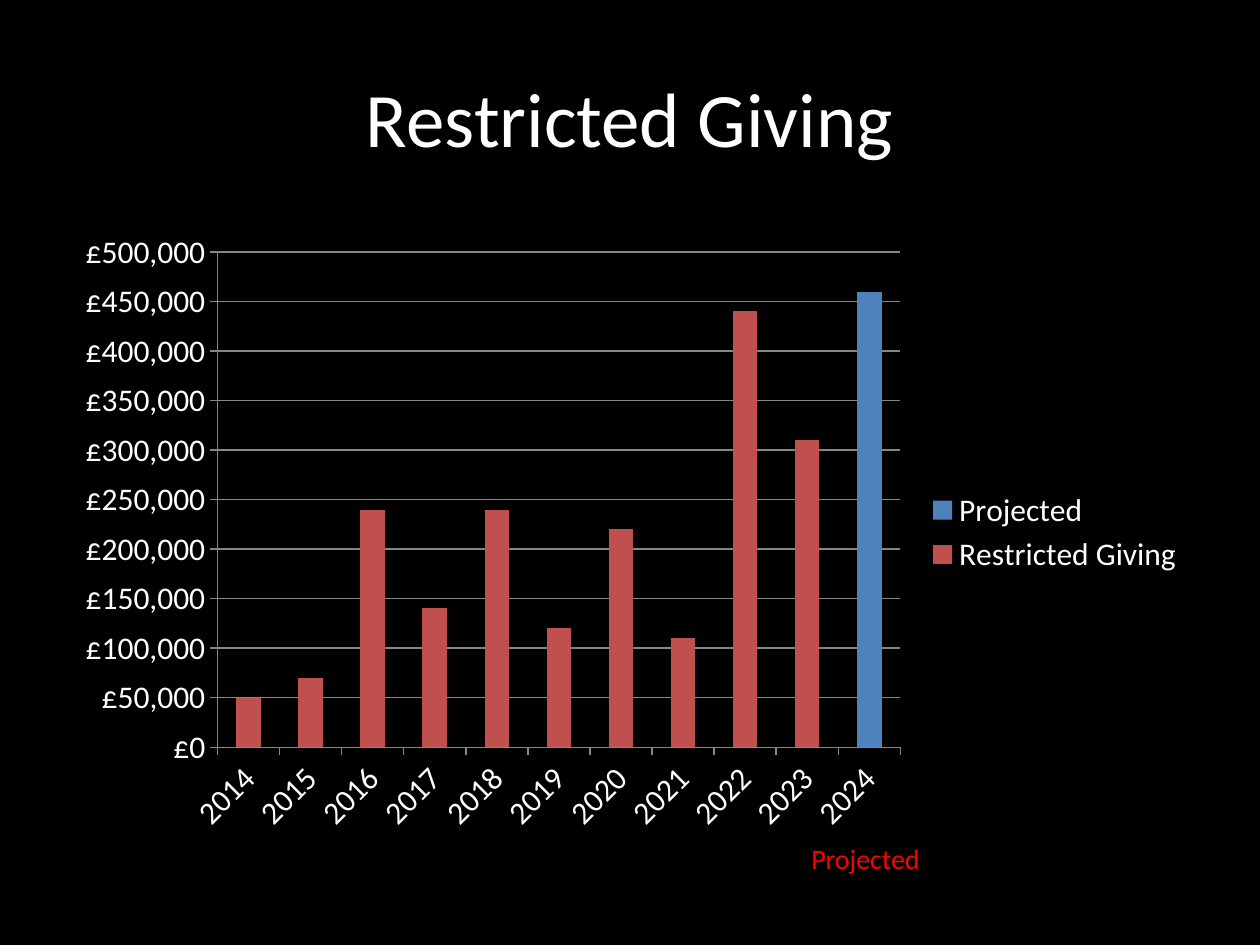
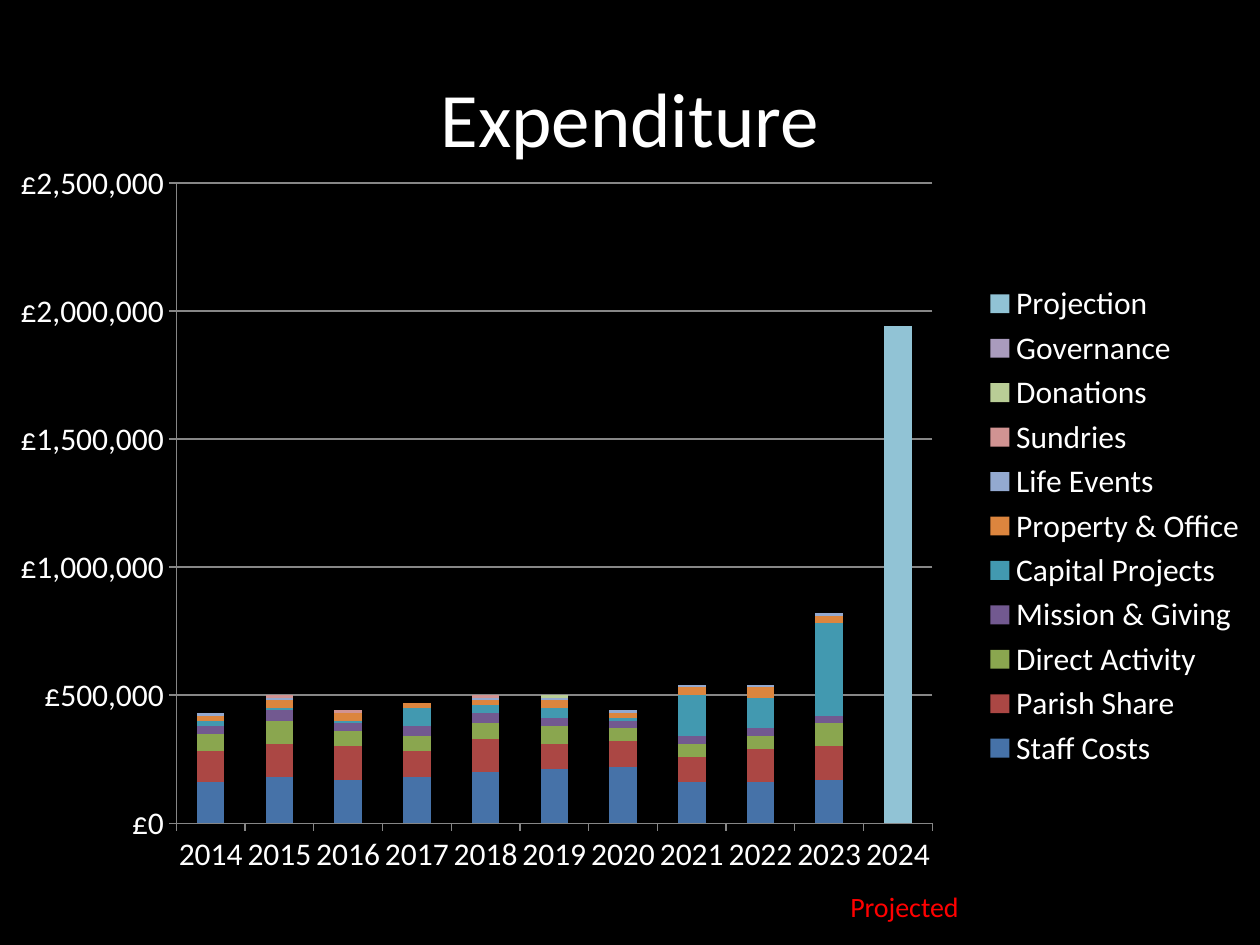
from dataclasses import dataclass

from lxml import etree
from pptx import Presentation
from pptx import util as u
from pptx.chart.data import CategoryChartData
from pptx.dml.color import RGBColor
from pptx.enum import chart as chart_enum
from pptx.enum import text
from pptx.oxml.ns import qn


@dataclass(frozen=True)
class Theme:
    font: str = "Calibri"
    background: str = "000000"
    foreground: str = "FFFFFF"
    accent: str = "FF0000"
    axis: str = "868686"
    title_size: int = 44
    chart_size: int = 18
    note_size: int = 16


THEME = Theme()
YEARS = [str(year) for year in range(2014, 2025)]
TITLE_BOX = (0.5, 0.3, 9, 1.25)

# Series: name, colour, values in thousands of pounds by year; missing years are empty.
ONLY_2024 = [None] * 10
GIVING = [
    ("Restricted Giving", "C0504D", [50, 70, 240, 140, 240, 120, 220, 110, 440, 310]),
    ("Projected", "4F81BD", ONLY_2024 + [460]),
]
EXPENDITURE = [
    ("Staff Costs", "4672A8", [160, 180, 170, 180, 200, 210, 220, 160, 160, 170]),
    ("Parish Share", "AB4744", [120, 130, 130, 100, 130, 100, 100, 100, 130, 130]),
    ("Direct Activity", "8AA64F", [70, 90, 60, 60, 60, 70, 50, 50, 50, 90]),
    ("Mission & Giving", "725990", [30, 40, 30, 40, 40, 30, 30, 30, 30, 30]),
    ("Capital Projects", "4299B0", [20, 10, 10, 70, 30, 40, 10, 160, 120, 360]),
    ("Property & Office", "DC853E", [20, 30, 30, 20, 20, 30, 20, 30, 40, 30]),
    ("Life Events", "93A9D0", [10, 10, 0, None, 10, 10, 10, 10, 10, 10]),
    ("Sundries", "D19392", [0, 10, 10, 0, 10, 0, 0, 0, 0, 0]),
    ("Donations", "B9CD96", [None] * 4 + [0, 10, 0, 0, 0, 0]),
    ("Governance", "A99BBD", [None] * 4 + [0] * 6),
    ("Projection", "91C3D5", ONLY_2024 + [1940]),
]


def inches(box):
    return [u.Inches(length) for length in box]


def set_attributes(target, **values):
    for name, value in values.items():
        setattr(target, name, value)


def style_font(font, size, color):
    set_attributes(font, name=THEME.font, size=u.Pt(size))
    font.color.rgb = RGBColor.from_string(color)


def style_line(line_format):
    line_format.color.rgb = RGBColor.from_string(THEME.axis)
    line_format.width = u.Pt(0.75)


def add_text(slide, box, words, size, color, **frame_format):
    shape = slide.shapes.add_textbox(*inches(box))
    set_attributes(shape.text_frame, **frame_format)
    paragraph = shape.text_frame.paragraphs[0]
    run = paragraph.add_run()
    run.text = words
    style_font(run.font, size, color)
    return paragraph


def add_title(slide, words):
    paragraph = add_text(slide, TITLE_BOX, words, THEME.title_size, THEME.foreground,
                         word_wrap=True, vertical_anchor=text.MSO_ANCHOR.MIDDLE)
    paragraph.alignment = text.PP_ALIGN.CENTER


def add_projected_note(slide, left, top):
    add_text(slide, (left, top, 1.08, 0.37), "Projected", THEME.note_size, THEME.accent,
             word_wrap=False, auto_size=text.MSO_AUTO_SIZE.SHAPE_TO_FIT_TEXT)


def place_plot(chart, plot_box):
    """Fix the inner plot area, in fractions of the chart's width and height."""
    plot_area = chart.plots[0]._element.getparent()
    for old_layout in plot_area.findall(qn("c:layout")):
        plot_area.remove(old_layout)
    layout = etree.Element(qn("c:layout"))
    manual = etree.SubElement(layout, qn("c:manualLayout"))
    settings = [("layoutTarget", "inner"), ("xMode", "edge"), ("yMode", "edge"),
                *zip("xywh", plot_box)]
    for tag, value in settings:
        etree.SubElement(manual, qn(f"c:{tag}")).set("val", str(value))
    plot_area.insert(0, layout)


def style_axes(chart, maximum, step):
    for axis in (chart.category_axis, chart.value_axis):
        set_attributes(axis, major_tick_mark=chart_enum.XL_TICK_MARK.OUTSIDE,
                       minor_tick_mark=chart_enum.XL_TICK_MARK.NONE)
        style_line(axis.format.line)
        style_font(axis.tick_labels.font, THEME.chart_size, THEME.foreground)
    value_axis = chart.value_axis
    set_attributes(value_axis, minimum_scale=0, maximum_scale=maximum,
                   major_unit=step, has_major_gridlines=True)
    style_line(value_axis.major_gridlines.format.line)
    set_attributes(value_axis.tick_labels, number_format='"£"#,##0',
                   number_format_is_linked=False)


def add_stacked_chart(slide, box, series_rows, maximum, step, plot_box=None):
    data = CategoryChartData()
    data.categories = YEARS
    for name, _, thousands in series_rows:
        padded = thousands + [None] * (len(YEARS) - len(thousands))
        data.add_series(name, [None if value is None else value * 1000 for value in padded])
    chart = slide.shapes.add_chart(
        chart_enum.XL_CHART_TYPE.COLUMN_STACKED, *inches(box), data).chart
    set_attributes(chart, has_title=False, has_legend=True)
    style_font(chart.font, THEME.chart_size, THEME.foreground)
    style_font(chart.legend.font, THEME.chart_size, THEME.foreground)
    set_attributes(chart.legend, position=chart_enum.XL_LEGEND_POSITION.RIGHT,
                   include_in_layout=False)
    plot = chart.plots[0]
    set_attributes(plot, gap_width=150, overlap=100, vary_by_categories=False)
    for series, (_, color, _) in zip(plot.series, series_rows):
        series.format.fill.solid()
        series.format.fill.fore_color.rgb = RGBColor.from_string(color)
    style_axes(chart, maximum, step)
    if plot_box:
        place_plot(chart, plot_box)


def add_chart_slide(presentation, title, note_position, **chart_options):
    slide = presentation.slides.add_slide(presentation.slide_layouts[6])
    fill = slide.background.fill
    fill.solid()
    fill.fore_color.rgb = RGBColor.from_string(THEME.background)
    add_title(slide, title)
    add_stacked_chart(slide, **chart_options)
    add_projected_note(slide, *note_position)


def main():
    presentation = Presentation()
    set_attributes(presentation, slide_width=u.Inches(10), slide_height=u.Inches(7.5))
    add_chart_slide(presentation, "Restricted Giving", (6.34, 6.63),
                    box=(0.5, 1.75, 9, 4.95), series_rows=GIVING,
                    maximum=500_000, step=50_000)
    add_chart_slide(presentation, "Expenditure", (6.65, 7.01),
                    box=(0, 1.15, 10, 6.05), series_rows=EXPENDITURE,
                    maximum=2_500_000, step=500_000, plot_box=(0.14, 0.05, 0.6, 0.84))
    presentation.save("out.pptx")


if __name__ == "__main__":
    main()
